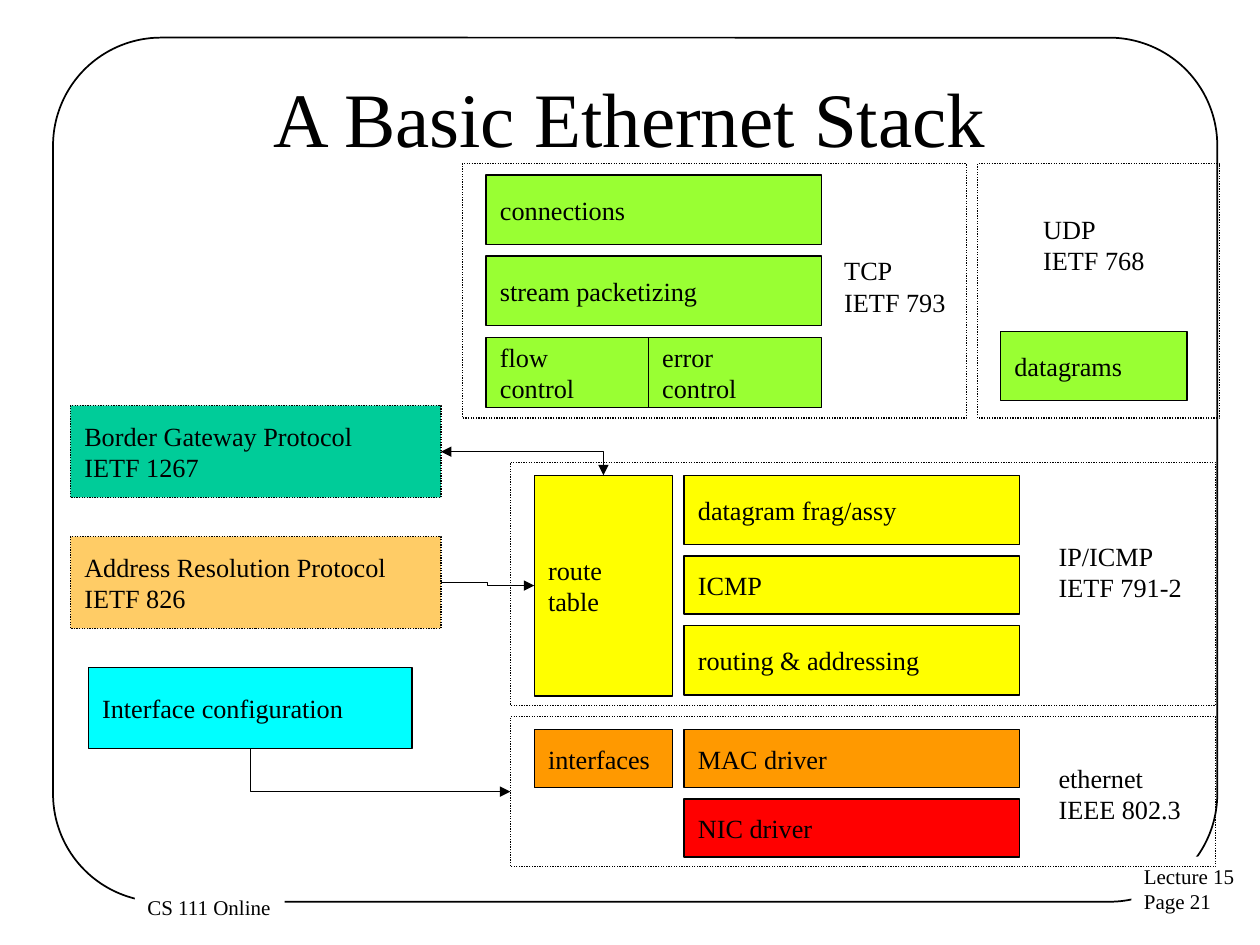
from lxml.etree import SubElement
from pptx import Presentation
from pptx.dml.color import RGBColor
from pptx.enum.dml import MSO_LINE
from pptx.enum.shapes import MSO_CONNECTOR, MSO_SHAPE
from pptx.enum.text import MSO_ANCHOR, PP_ALIGN
from pptx.oxml.ns import qn
from pptx.util import Cm, Pt

FONT = "Times New Roman"
COLORS = {
    "black": "000000", "white": "FFFFFF", "green": "99FF33", "teal": "00CC99",
    "sand": "FFCC66", "cyan": "00FFFF", "yellow": "FFFF00", "orange": "FF9900",
    "red": "FF0000",
}

# Content; lengths in centimetres
TITLE = "A Basic Ethernet Stack"
FOOTERS = [  # text, left, top, width, height
    ("Lecture 15\nPage 21", 22.81, 17.27, 2.36, 1.3),
    ("CS 111 Online", 2.72, 17.91, 3.02, 0.76),
]
LAYERS = {  # dotted outlines: left, top, width, height
    "TCP": (9.32, 3.3, 10.16, 5.13),
    "UDP": (19.71, 3.3, 4.88, 5.13),
    "IP": (10.29, 9.32, 14.22, 4.9),
    "ethernet": (10.29, 14.45, 14.22, 3.02),
}
LABELS = [  # text, left, top, width
    ("TCP\nIETF 793", 16.74, 4.98, 2.74),
    ("UDP\nIETF 768", 20.75, 4.14, 2.74),
    ("IP/ICMP\nIETF 791-2", 21.06, 10.74, 3.07),
    ("ethernet\nIEEE 802.3", 21.06, 15.21, 3.07),
]
TALL, SHORT, GAP, STACK_WIDTH = 1.4, 1.17, 0.23, 6.76
STACKS = [  # left, top, boxes from top to bottom (text, colour, height)
    (9.8, 3.53, [("connections", "green", TALL), ("stream packetizing", "green", TALL)]),
    (13.79, 9.58, [("datagram frag/assy", "yellow", TALL), ("ICMP", "yellow", SHORT),
                   ("routing & addressing", "yellow", TALL)]),
    (13.79, 14.71, [("MAC driver", "orange", SHORT), ("NIC driver", "red", SHORT)]),
]
BOXES = [  # text, colour, left, top, width, height, dotted
    ("flow\ncontrol", "green", 9.8, 6.81, 3.27, TALL, False),
    ("error\ncontrol", "green", 13.07, 6.81, 3.49, TALL, False),
    ("datagrams", "green", 20.17, 6.68, 3.76, TALL, False),
    ("route\ntable", "yellow", 10.77, 9.58, 2.79, 4.45, False),
    ("interfaces", "orange", 10.77, 14.71, 2.79, SHORT, False),
    ("Border Gateway Protocol\nIETF 1267", "teal", 1.42, 8.18, 7.47, 1.85, True),
    ("Address Resolution Protocol\nIETF 826", "sand", 1.42, 10.82, 7.47, 1.85, True),
    ("Interface configuration", "cyan", 1.78, 13.46, 6.53, 1.63, False),
]
TOP, LEFT, BOTTOM, RIGHT = range(4)  # connection sites of a rectangle
ARROWS = [  # from, site, to, site, preset, arrowheads
    ("Border Gateway Protocol\nIETF 1267", RIGHT, "route\ntable", TOP,
     "bentConnector2", ("headEnd", "tailEnd")),
    ("Address Resolution Protocol\nIETF 826", RIGHT, "route\ntable", LEFT,
     "bentConnector3", ("tailEnd",)),
    ("ethernet", LEFT, "Interface configuration", BOTTOM,
     "bentConnector2", ("headEnd",)),
]

presentation = Presentation()
presentation.slide_width, presentation.slide_height = Cm(25.4), Cm(19.05)
slide = presentation.slides.add_slide(presentation.slide_layouts[5])


def color(name):
    return RGBColor.from_string(COLORS[name])


def write(shape, text, size=15, insets=(0.28, 0.15), align=PP_ALIGN.LEFT, wrap=True):
    frame = shape.text_frame
    frame.text = text
    frame.word_wrap = wrap
    frame.margin_left = frame.margin_right = Cm(insets[0])
    frame.margin_top = frame.margin_bottom = Cm(insets[1])
    for paragraph in frame.paragraphs:
        paragraph.alignment = align
        for run in paragraph.runs:
            run.font.name, run.font.size = FONT, Pt(size)
            run.font.color.rgb = color("black")


def add_box(place, fill=None, dotted=False, width=0.75, kind=MSO_SHAPE.RECTANGLE):
    shape = slide.shapes.add_shape(kind, *map(Cm, place))
    shape.shadow.inherit = False
    if fill:
        shape.fill.solid()
        shape.fill.fore_color.rgb = color(fill)
    else:
        shape.fill.background()
    shape.line.color.rgb = color("black")
    shape.line.width = Pt(width)
    if dotted:
        shape.line.dash_style = MSO_LINE.ROUND_DOT
    return shape


def add_text(text, place, **options):
    box = slide.shapes.add_textbox(*map(Cm, place))
    write(box, text, wrap=False, **options)
    return box


def add_arrow(start, start_site, end, end_site, preset, heads):
    arrow = slide.shapes.add_connector(MSO_CONNECTOR.ELBOW, 0, 0, 0, 0)
    arrow.begin_connect(start, start_site)
    arrow.end_connect(end, end_site)
    arrow.line.color.rgb = color("black")
    arrow.line.width = Pt(0.75)
    properties = arrow._element.spPr
    properties.find(qn("a:prstGeom")).set("prst", preset)
    for head in heads:
        SubElement(properties.find(qn("a:ln")), qn("a:" + head), type="triangle")
    SubElement(properties, qn("a:effectLst"))


# Page frame and footers
page_frame = add_box((1.07, 0.76, 23.47, 17.42), width=1, kind=MSO_SHAPE.ROUNDED_RECTANGLE)
page_frame.adjustments[0] = 0.125
for text, *place in FOOTERS:
    footer = add_text(text, place, size=12, insets=(0.25, 0.13))
    footer.fill.solid()
    footer.fill.fore_color.rgb = color("white")

# Title
title = slide.shapes.title
title.left, title.top, title.width, title.height = map(Cm, (1.27, 0.76, 22.86, 3.18))
write(title, TITLE, size=44, align=PP_ALIGN.CENTER)
title.text_frame.vertical_anchor = MSO_ANCHOR.MIDDLE

# Layer outlines
shapes = {name: add_box(place, dotted=True) for name, place in LAYERS.items()}

# Boxes, with the stacks laid out downwards
boxes = list(BOXES)
for left, top, items in STACKS:
    for text, fill, height in items:
        boxes.append((text, fill, left, top, STACK_WIDTH, height, False))
        top += height + GAP
for text, fill, *place, dotted in boxes:
    shapes[text] = add_box(place, fill, dotted)
    write(shapes[text], text)
    shapes[text].text_frame.vertical_anchor = MSO_ANCHOR.MIDDLE

# Layer labels
for text, left, top, width in LABELS:
    add_text(text, (left, top, width, 1.56))

# Arrows
for start, start_site, end, end_site, preset, heads in ARROWS:
    add_arrow(shapes[start], start_site, shapes[end], end_site, preset, heads)

presentation.save("out.pptx")
